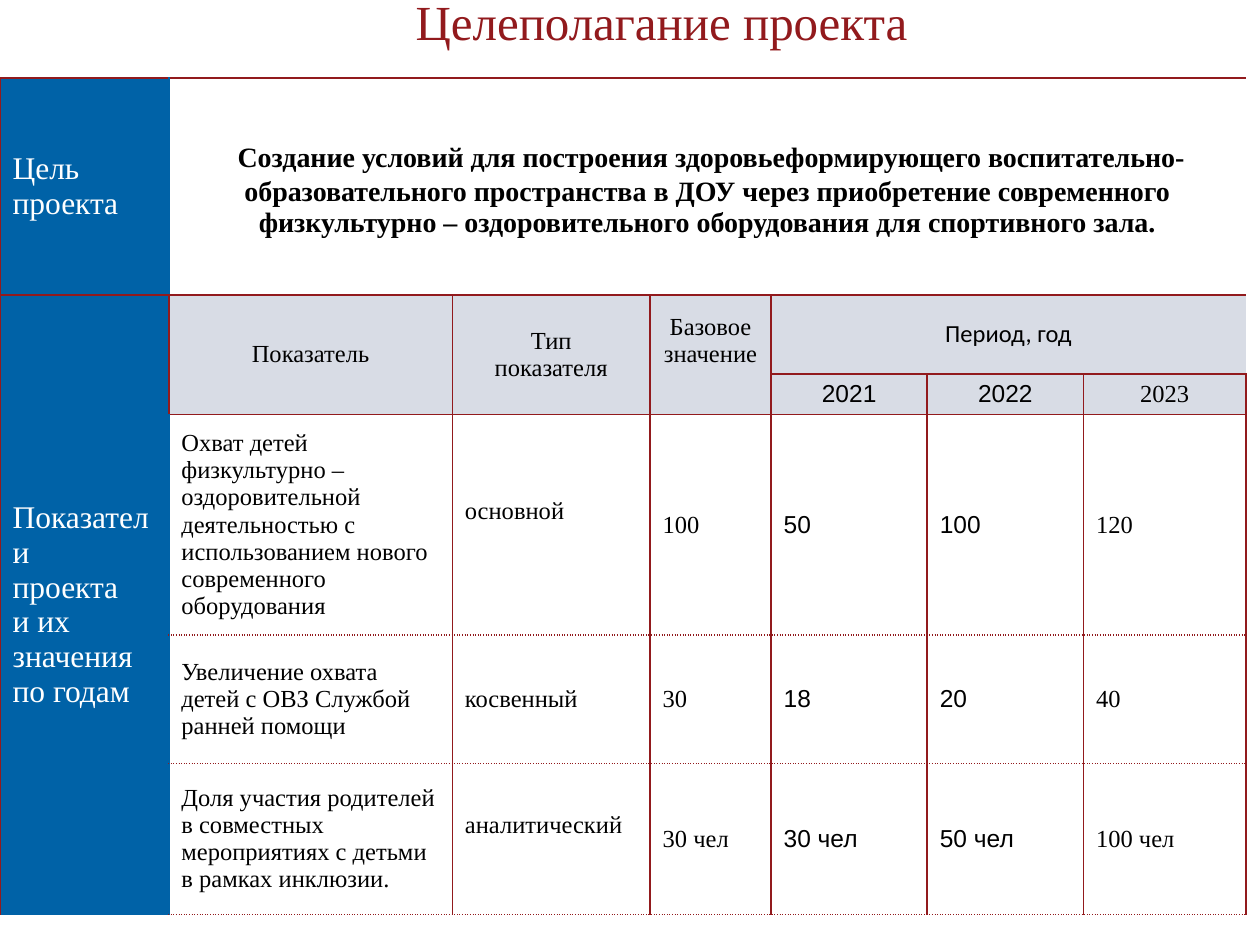
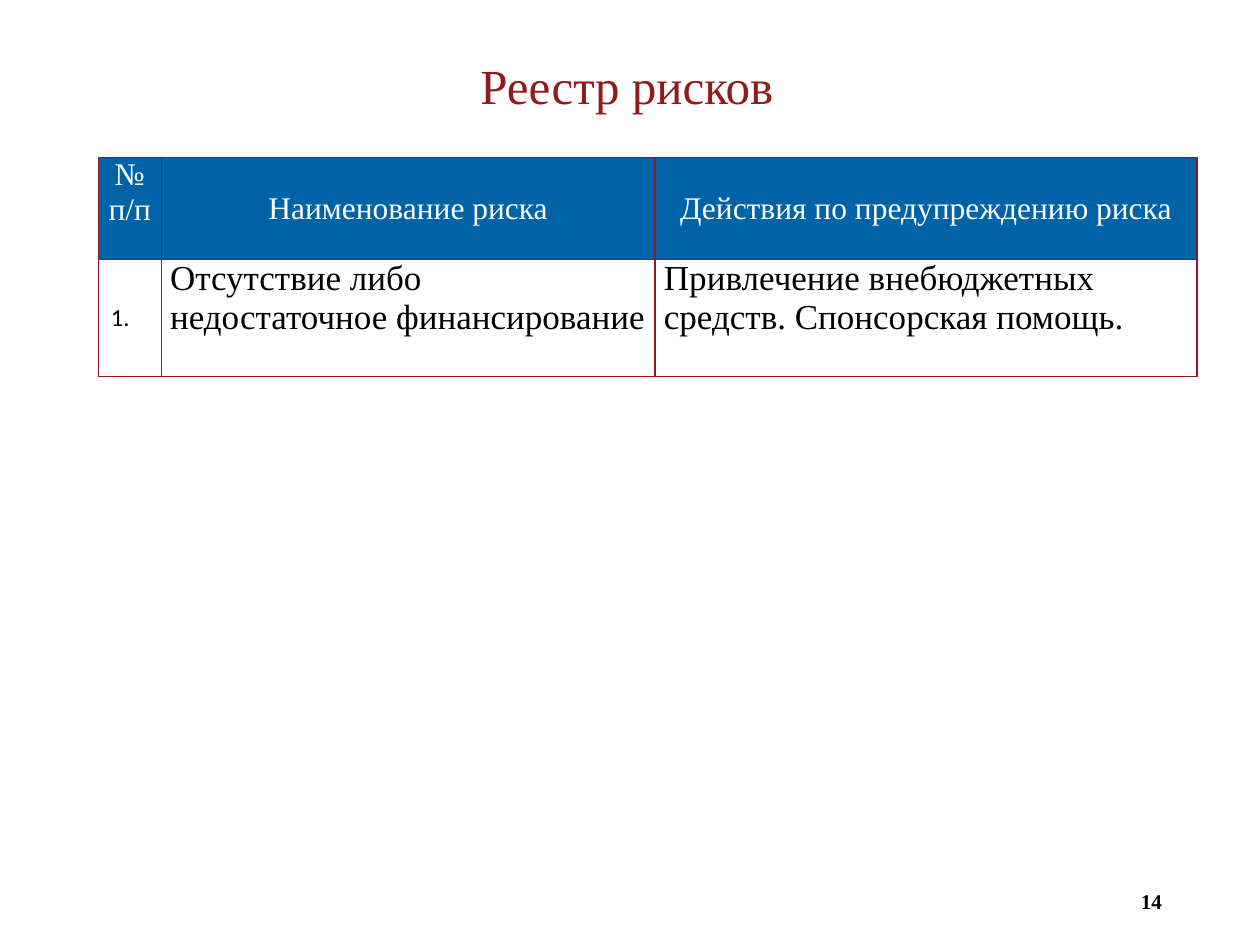
import pptx
import pptx.dml.color
import pptx.enum.text
import pptx.oxml
import pptx.oxml.ns
import pptx.util
from pptx.util import Inches

RGBColor = pptx.dml.color.RGBColor
RED = RGBColor(0x92, 0x1A, 0x1D)
BLUE = RGBColor(0x00, 0x62, 0xA7)
GREY = RGBColor(0xD8, 0xDC, 0xE5)
WHITE = RGBColor(0xFF, 0xFF, 0xFF)
BLACK = RGBColor(0x00, 0x00, 0x00)

SERIF, SANS, PLAIN = "Times New Roman", "Arial", "Calibri"
LEFT, CENTER, RIGHT = (pptx.enum.text.PP_ALIGN.LEFT, pptx.enum.text.PP_ALIGN.CENTER,
                       pptx.enum.text.PP_ALIGN.RIGHT)
TOP, MIDDLE = pptx.enum.text.MSO_ANCHOR.TOP, pptx.enum.text.MSO_ANCHOR.MIDDLE
NO_TABLE_STYLE = "{2D5ABB26-0587-4C30-8999-92F81FD0307C}"
MARGINS = ("margin_left", "margin_top", "margin_right", "margin_bottom")


class Deck:
    """Holds the shared style and the current slide."""

    def __init__(self):
        self.deck = pptx.Presentation()
        self.deck.slide_width, self.deck.slide_height = Inches(10), Inches(7.5)
        self.page = None

    def add_page(self):
        self.page = self.deck.slides.add_slide(self.deck.slide_layouts[6])

    def fill_text(self, frame, paragraphs, size, color, align=LEFT, font=SERIF, bold=False,
                  spacing=1.0):
        """Each paragraph is a string or a list of (text, own format) spans."""
        for index, spans in enumerate(paragraphs):
            para = frame.paragraphs[0] if index == 0 else frame.add_paragraph()
            para.alignment, para.line_spacing = align, spacing
            if isinstance(spans, str):
                spans = [(spans, {})]
            for text, own in spans:
                span = para.add_run()
                span.text = text
                look = {"name": font, "size": pptx.util.Pt(size), "bold": bold, **own}
                for name, value in look.items():
                    setattr(span.font, name, value)
                span.font.color.rgb = color

    def text(self, words, left, top, width, height, **style):
        box = self.page.shapes.add_textbox(*map(Inches, (left, top, width, height)))
        box.text_frame.word_wrap = True
        box.text_frame.vertical_anchor = MIDDLE
        self.fill_text(box.text_frame, [words], **style)

    def title(self, words, left, top, width, height, align=LEFT):
        self.text(words, left, top, width, height, size=28, color=RED, align=align, spacing=0.9)

    def page_number(self, number):
        self.text(number, 7.07, 6.95, 2.25, 0.4, size=12, color=BLACK, align=RIGHT, bold=True)

    def table(self, left, top, columns, rows):
        frame = self.page.shapes.add_table(len(rows), len(columns), Inches(left), Inches(top),
                                           Inches(sum(columns)), Inches(sum(rows)))
        table = frame.table
        table.first_row = table.horz_banding = False
        style = table._tbl.tblPr.find(pptx.oxml.ns.qn("a:tableStyleId"))
        style.text = NO_TABLE_STYLE
        for column, width in zip(table.columns, columns):
            column.width = Inches(width)
        for row, height in zip(table.rows, rows):
            row.height = Inches(height)
        return table

    def cell(self, table, row, column, paragraphs, fill, span=(1, 1), edges=None,
             anchor=MIDDLE, margins=(0.1, 0.05, 0.1, 0.05), **style):
        """Edges maps a side (L, R, T, B) to a colour and a dash."""
        last_row, last_column = row + span[0] - 1, column + span[1] - 1
        cell = table.cell(row, column)
        if span != (1, 1):
            cell.merge(table.cell(last_row, last_column))
        cell.vertical_anchor = anchor
        for name, value in zip(MARGINS, margins):
            setattr(cell, name, Inches(value))
        self.fill_text(cell.text_frame, paragraphs, **style)

        # Only the outer sides of a merged area get a line
        looks = {side: (RED, "solid") for side in "LRTB"} | (edges or {})
        for r in range(row, last_row + 1):
            for c in range(column, last_column + 1):
                part = table.cell(r, c)
                part.fill.solid()
                part.fill.fore_color.rgb = fill
                outer = {"L": c == column, "R": c == last_column,
                         "T": r == row, "B": r == last_row}
                self.borders(part, {side: look for side, look in looks.items() if outer[side]})

    def borders(self, cell, looks):
        for index, (side, (color, dash)) in enumerate(looks.items()):
            line = pptx.oxml.parse_xml(
                f'<a:ln{side} {pptx.oxml.ns.nsdecls("a")} w="{pptx.util.Pt(1)}">'
                f'<a:solidFill><a:srgbClr val="{color}"/></a:solidFill>'
                f'<a:prstDash val="{dash}"/></a:ln{side}>')
            cell._tc.get_or_add_tcPr().insert(index, line)


def build_goals(show):
    show.add_page()
    table = show.table(0, 0.62, columns=[1.34, 2.25, 1.57, 0.96, 1.24, 1.24, 1.29],
                       rows=[1.72, 0.63, 0.32, 1.75, 1.02, 1.2])
    seam = (BLUE, "solid")
    dotted = (RED, "sysDot")
    raised = (0.1, 0.05, 0.1, 0.27)

    # Goal and the blue side labels
    label = {"fill": BLUE, "size": 18, "color": WHITE}
    show.cell(table, 0, 0, ["Цель проекта"], edges={"R": seam}, **label)
    show.cell(table, 1, 0, ["Показатели", "проекта", "и их значения", "по годам"],
              span=(5, 1), **label)
    goal = ("Создание условий для построения здоровьеформирующего "
            "воспитательно-образовательного пространства в ДОУ через "
            "приобретение современного физкультурно – оздоровительного "
            "оборудования для спортивного зала.")
    lead = {"name": PLAIN, "size": pptx.util.Pt(20)}
    show.cell(table, 0, 1, [[(" ", lead), (goal, {})]], WHITE, span=(1, 6),
              edges={"L": seam}, size=16, color=BLACK, align=CENTER, bold=True)

    # Column headings
    heading = {"fill": GREY, "size": 14, "color": BLACK, "align": CENTER}
    show.cell(table, 1, 1, ["Показатель"], span=(2, 1), **heading)
    show.cell(table, 1, 2, ["Тип", "показателя"], span=(2, 1), **heading)
    show.cell(table, 1, 3, ["Базовое", "значение"], span=(2, 1), margins=raised, **heading)
    show.cell(table, 1, 4, ["Период, год"], span=(1, 3), font=PLAIN, **heading)
    fonts = [SERIF, SERIF, SERIF, SERIF, SANS, SANS, SERIF]
    for column, year in enumerate(["2021", "2022", "2023"], start=4):
        show.cell(table, 2, column, [year], font=fonts[column], **heading)

    # Indicators by year
    indicators = [
        ("Охват детей физкультурно – оздоровительной деятельностью с использованием "
         "нового современного оборудования", "основной", "100", "50", "100", "120"),
        ("Увеличение охвата детей с ОВЗ Службой ранней помощи",
         "косвенный", "30", "18", "20", "40"),
        ("Доля участия родителей в совместных мероприятиях с детьми в рамках инклюзии.",
         "аналитический", "30 чел", "30 чел", "50 чел", "100 чел"),
    ]
    for row, values in enumerate(indicators, start=3):
        for column, value in enumerate(values, start=1):
            edges = {"B": dotted}
            if row > 3:
                edges["T"] = dotted
            if column == 1:
                edges["L"] = seam
            layout = {"margins": raised} if value in ("основной", "аналитический") else {}
            show.cell(table, row, column, [value], WHITE, edges=edges, size=14,
                      color=BLACK, font=fonts[column], **layout)

    show.title("Целеполагание проекта", 3.2, 0, 4.38, 0.39)


def build_risks(show):
    show.add_page()
    show.page_number("14")
    show.title("Реестр рисков", 0.78, 0.25, 8.39, 0.9, align=CENTER)
    table = show.table(0.78, 1.25, columns=[0.5, 3.92, 4.3], rows=[0.81, 0.93])
    tight = (0.07, 0, 0.07, 0)

    # Heading row
    headings = [(["№", "п/п"], TOP), (["Наименование риска"], MIDDLE),
                (["Действия по предупреждению риска"], MIDDLE)]
    for column, (words, anchor) in enumerate(headings):
        show.cell(table, 0, column, words, BLUE, anchor=anchor, margins=tight,
                  size=18, color=WHITE, align=CENTER)

    # Risk row
    show.cell(table, 1, 0, ["1."], WHITE, size=14, color=BLACK, font=PLAIN)
    risk = ["Отсутствие либо недостаточное финансирование",
            "Привлечение внебюджетных средств. Спонсорская помощь."]
    for column, words in enumerate(risk, start=1):
        show.cell(table, 1, column, [words], WHITE, anchor=TOP, margins=tight,
                  size=20, color=BLACK)


def main():
    show = Deck()
    build_goals(show)
    build_risks(show)
    show.deck.save("out.pptx")


if __name__ == "__main__":
    main()
